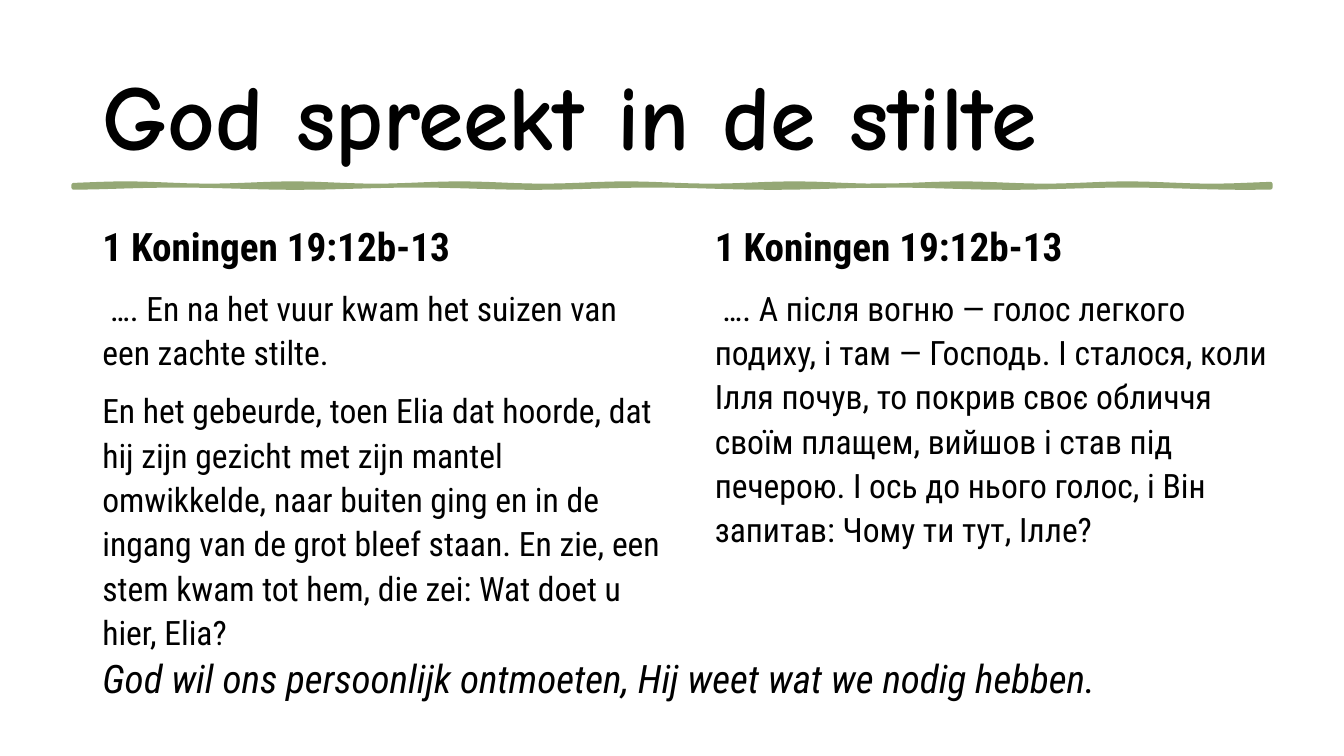
import math

import pptx
import pptx.dml.color
import pptx.enum.shapes
import pptx.enum.text
import pptx.util

Pt = pptx.util.Pt


def color(hex_text):
    return pptx.dml.color.RGBColor.from_string(hex_text)


def add_text(left, top, width, height, paragraphs, font_name="Roboto Condensed"):
    """Add a text box; each paragraph is (text, size, bold, italic)."""
    box = page.shapes.add_textbox(Pt(left), Pt(top), Pt(width), Pt(height))
    frame = box.text_frame
    frame.word_wrap = True
    for index, (text, size, bold, italic) in enumerate(paragraphs):
        para = frame.add_paragraph() if index else frame.paragraphs[0]
        para.text = text
        para.font.name = font_name
        para.font.size = Pt(size)
        para.font.bold = bold
        para.font.italic = italic
        para.font.color.rgb = color("000000")
    return frame


deck = pptx.Presentation()
deck.slide_width = Pt(960)
deck.slide_height = Pt(540)
page = deck.slides.add_slide(deck.slide_layouts[6])

backdrop = page.shapes.add_shape(
    pptx.enum.shapes.MSO_SHAPE.RECTANGLE, 0, 0, deck.slide_width, deck.slide_height)
backdrop.shadow.inherit = False
backdrop.fill.solid()
backdrop.fill.fore_color.rgb = color("FFFFFF")
backdrop.line.fill.background()

# Hand-drawn underline: two edges that waver independently
rule_left, rule_right, step = 52.5, 907.5, 9
xs = [rule_left + step * i for i in range(int((rule_right - rule_left) / step) + 1)]
upper = [(x, 131.9 + 0.8 * math.sin(x / 19)) for x in xs]
lower = [(x, 133.3 + 0.8 * math.sin(x / 27)) for x in reversed(xs)]
outline = [(Pt(x), Pt(y)) for x, y in upper + lower]
builder = page.shapes.build_freeform(*outline[0])
builder.add_line_segments(outline[1:], close=True)
underline = builder.convert_to_shape()
underline.shadow.inherit = False
underline.fill.solid()
underline.fill.fore_color.rgb = color("95A876")
underline.line.color.rgb = color("95A876")
underline.line.width = Pt(3)

title = add_text(66, 29, 828, 104.5,
                 [("God spreekt in de stilte", 66, True, False)], "Comic Neue")
title.vertical_anchor = pptx.enum.text.MSO_ANCHOR.MIDDLE

reference = ("1 Koningen 19:12b-13", 28, True, False)
dutch = [
    " …. En na het vuur kwam het suizen van een zachte stilte.",
    "En het gebeurde, toen Elia dat hoorde, dat hij zijn gezicht met zijn mantel "
    "omwikkelde, naar buiten ging en in de ingang van de grot bleef staan. En zie, "
    "een stem kwam tot hem, die zei: Wat doet u hier, Elia?",
]
ukrainian = [
    " …. А після вогню — голос легкого подиху, і там — Господь. І сталося, коли "
    "Ілля почув, то покрив своє обличчя своїм плащем, вийшов і став під печерою. "
    "І ось до нього голос, і Він запитав: Чому ти тут, Ілле?",
]
for left, verses in ((66, dutch), (503.5, ukrainian)):
    passage = [reference] + [(verse, 24, False, False) for verse in verses]
    column = add_text(left, 152, 414, 335, passage)
    for para in column.paragraphs:
        para.line_spacing = 1.1
        para.space_before = Pt(10)

closing = add_text(66, 463.5, 785.5, 41, [
    ("God wil ons persoonlijk ontmoeten, Hij weet wat we nodig hebben.", 28, False, True)])
closing.auto_size = pptx.enum.text.MSO_AUTO_SIZE.SHAPE_TO_FIT_TEXT

deck.save("out.pptx")
